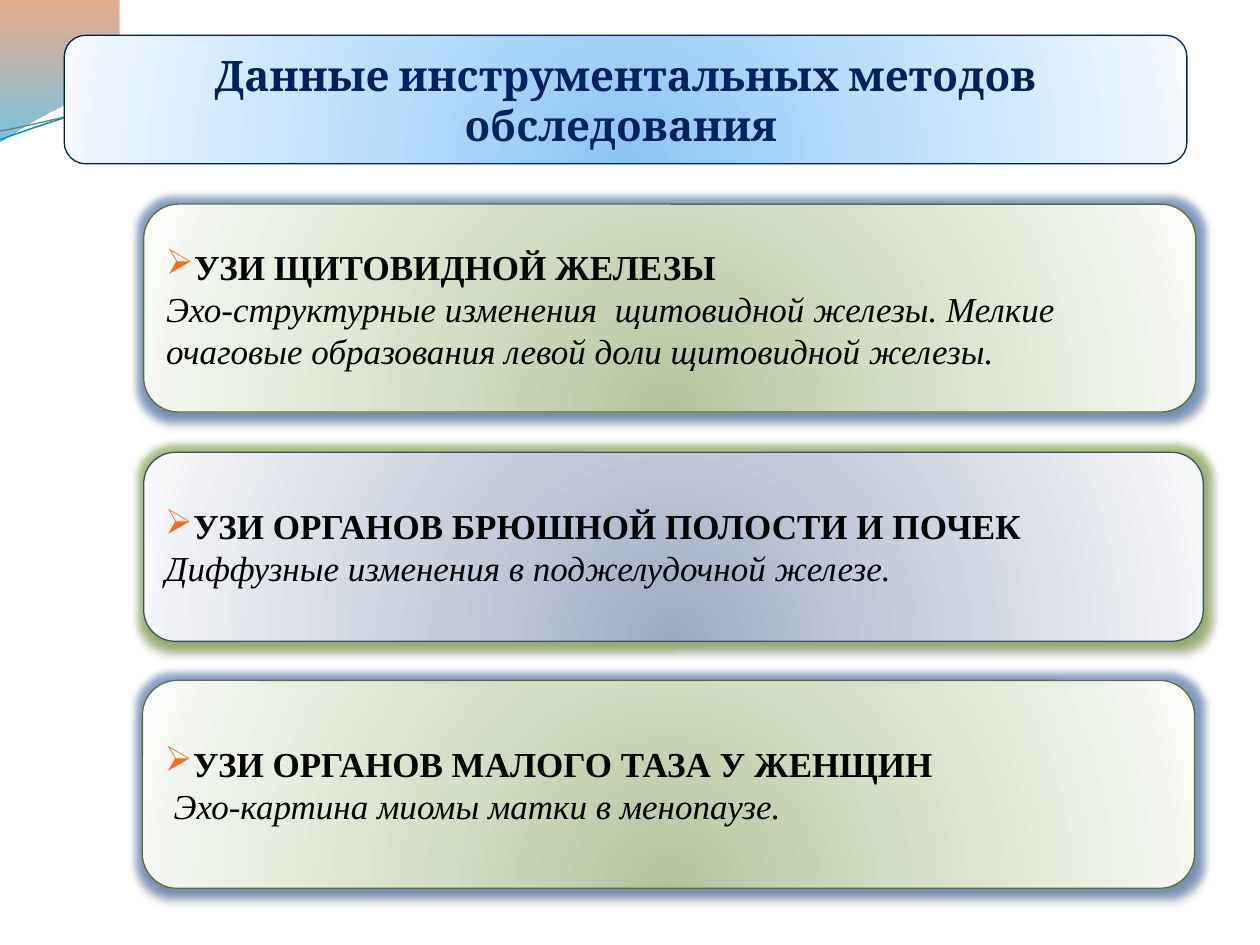
from lxml.etree import fromstring
from pptx import Presentation
from pptx.dml.color import RGBColor
from pptx.enum.shapes import MSO_SHAPE
from pptx.enum.text import MSO_ANCHOR, PP_ALIGN
from pptx.oxml.ns import nsdecls
from pptx.util import Inches, Pt

WHITE = RGBColor(0xFF, 0xFF, 0xFF)
BLACK = RGBColor(0, 0, 0)
NAVY = RGBColor(0x00, 0x20, 0x60)
OLIVE = RGBColor(0x5C, 0x71, 0x36)
SLATE = RGBColor(0x3A, 0x51, 0x6E)
ORANGE = RGBColor(0xF9, 0x6A, 0x1B)
BLUE_GLOW = RGBColor(0x5A, 0x82, 0xBE)
GREEN_GLOW = RGBColor(0x8D, 0xB4, 0x4F)
STRAND_BLUE = RGBColor(0x07, 0x8E, 0xBF)
STRAND_GRAY = RGBColor(0x79, 0x7B, 0x7E)
RUST = RGBColor(0xC9, 0x4A, 0x04)
AZURE = RGBColor(0x00, 0x95, 0xCC)
DEEP_AZURE = RGBColor(0x00, 0x7A, 0xA6)
BRIGHT_ORANGE = RGBColor(0xF4, 0x57, 0x00)


def shades(*colours):
    return [(position, RGBColor.from_string(colour), 100)
            for position, colour in zip((0, 43, 93, 100), colours)]


SKY_FILL = shades("8BC5F1", "B9DDFD", "EAF4FE", "F8FBFF")
GREEN_FILL = shades("B2C39B", "D3DFC5", "F1F5ED", "FBFCF9")
BLUE_FILL = shades("9DAAC1", "C6CEDD", "EEF0F4", "F9FAFC")

RADIAL = '<a:path path="circle"><a:fillToRect l="50000" t="130000" r="50000" b="-30000"/></a:path>'
DOWNWARD = '<a:lin ang="5400000" scaled="0"/>'

TITLE_FONT = {"name": "Cambria", "size": Pt(24), "bold": True}
HEADING_FONT = {"name": "Times New Roman", "size": Pt(20), "bold": True}
FINDING_FONT = {"name": "Times New Roman", "size": Pt(20), "bold": False, "italic": True}

CARDS = [
    ((1.14, 1.62, 8.35, 1.65), GREEN_FILL, OLIVE, BLUE_GLOW, "УЗИ ЩИТОВИДНОЙ ЖЕЛЕЗЫ",
     "Эхо-структурные изменения  щитовидной железы. Мелкие очаговые образования "
     "левой доли щитовидной железы."),
    ((1.14, 3.59, 8.41, 1.5), BLUE_FILL, SLATE, GREEN_GLOW,
     "УЗИ ОРГАНОВ БРЮШНОЙ ПОЛОСТИ И ПОЧЕК", "Диффузные изменения в поджелудочной железе."),
    ((1.13, 5.4, 8.35, 1.65), GREEN_FILL, OLIVE, BLUE_GLOW,
     "УЗИ ОРГАНОВ МАЛОГО ТАЗА У ЖЕНЩИН", " Эхо-картина миомы матки в менопаузе."),
]

WAVES = [
    ([(0, RUST, 45), (100, AZURE, 55)], (0, 0), [
        [(4.4, -0.01)],
        [(4.76, 0.17), (6.64, 0.63), (7.58, 0.63)],
        [(8.53, 0.63), (9.58, 0.26), (10, 0.09)],
        [(10.01, 0.36)],
        [(9.83, 0.44), (8.7, 0.76), (7.46, 0.75)],
        [(6.22, 0.75), (3.82, 0.28), (2.57, 0.34)],
        [(1.29, 0.36), (0.46, 0.83), (-0.01, 1.13)],
        [(0, 0)]]),
    ([(0, DEEP_AZURE, 30), (80, BRIGHT_ORANGE, 45)], (4.79, -0.01), [
        [(5.09, 0.11), (6.82, 0.62), (7.69, 0.65)],
        [(8.56, 0.69), (9.61, 0.32), (10, 0.21)],
        [(10, 0)],
        [(4.79, -0.01)]]),
]
STRANDS = [
    (STRAND_BLUE, 0.85, (0, 1.11), [
        [(0.48, 0.93), (1.58, 0.57), (2.77, 0.52)],
        [(3.95, 0.47), (5.93, 0.89), (7.13, 0.8)],
        [(8.33, 0.71), (9.38, 0.15), (9.98, -0.02)]]),
    (STRAND_GRAY, 0.75, (0, 1.04), [
        [(0.47, 0.96), (1.64, 0.61), (2.83, 0.56)],
        [(4.03, 0.51), (5.97, 0.84), (7.17, 0.75)],
        [(8.36, 0.67), (9.41, 0.21), (10, 0.06)]]),
]


def element(xml):
    return fromstring(xml.replace(" ", f" {nsdecls('a')} ", 1))


def colour_xml(colour, opacity):
    return f'<a:srgbClr val="{colour}"><a:alpha val="{opacity * 1000}"/></a:srgbClr>'


def set_gradient(shape, stops, direction):
    stop_xml = "".join(f'<a:gs pos="{position * 1000}">{colour_xml(colour, opacity)}</a:gs>'
                       for position, colour, opacity in stops)
    shape._element.spPr.insert(2, element(
        f'<a:gradFill rotWithShape="1"><a:gsLst>{stop_xml}</a:gsLst>{direction}</a:gradFill>'))


def set_glow(shape, glow):
    effects = shape._element.spPr.find("{*}effectLst")
    effects.append(element(f'<a:glow rad="{Pt(8)}">{colour_xml(glow, 60)}</a:glow>'))
    effects.append(element(
        f'<a:outerShdw blurRad="{Pt(3.1)}" dist="{Pt(1.6)}" dir="5400000" '
        f'rotWithShape="0">{colour_xml(BLACK, 38)}</a:outerShdw>'))


def bend_segments(shape, segments):
    straight = iter(list(shape._element.iter("{*}lnTo")))
    for segment in segments:
        pieces = [next(straight) for _ in segment]
        if len(segment) == 3:
            curve = element("<a:cubicBezTo />")
            pieces[0].addprevious(curve)
            for piece in pieces:
                curve.append(piece[0])
                piece.getparent().remove(piece)


def add_curve(slide, start, segments):
    builder = slide.shapes.build_freeform(*map(Inches, start))
    points = [tuple(map(Inches, point)) for segment in segments for point in segment]
    builder.add_line_segments(points, close=start == segments[-1][-1])
    shape = builder.convert_to_shape()
    shape.shadow.inherit = False
    bend_segments(shape, segments)
    return shape


def add_backdrop(slide, presentation):
    for stops, start, segments in WAVES:
        wave = add_curve(slide, start, segments)
        set_gradient(wave, stops, DOWNWARD)
        wave.line.fill.background()
    for colour, width, start, segments in STRANDS:
        strand = add_curve(slide, start, segments)
        strand.fill.background()
        strand.line.color.rgb = colour
        strand.line.width = Pt(width)
    panel = slide.shapes.add_shape(MSO_SHAPE.RECTANGLE,
                                   *map(Inches, (0.95, -0.06, 9.05, 7.56)))
    panel.shadow.inherit = False
    panel.fill.solid()
    panel.fill.fore_color.rgb = WHITE
    panel.line.fill.background()


def add_box(slide, place, stops, outline):
    shape = slide.shapes.add_shape(MSO_SHAPE.ROUNDED_RECTANGLE, *map(Inches, place))
    shape.shadow.inherit = False
    set_gradient(shape, stops, RADIAL)
    shape.line.color.rgb = outline
    shape.line.width = Pt(0.75)
    shape.text_frame.word_wrap = True
    shape.text_frame.vertical_anchor = MSO_ANCHOR.MIDDLE
    return shape


def write(paragraph, text, formats, colour, alignment):
    paragraph.alignment = alignment
    run = paragraph.add_run()
    run.text = text
    for name, value in formats.items():
        setattr(run.font, name, value)
    run.font.color.rgb = colour


def add_bullet(paragraph):
    properties = paragraph._p.get_or_add_pPr()
    properties.append(element(f'<a:buClr ><a:srgbClr val="{ORANGE}"/></a:buClr>'))
    properties.append(element('<a:buFont typeface="OpenSymbol"/>'))
    properties.append(element('<a:buChar char="➢"/>'))


def add_title(slide):
    shape = add_box(slide, (0.51, 0.28, 8.91, 1.02), SKY_FILL, NAVY)
    write(shape.text_frame.paragraphs[0], "Данные инструментальных методов обследования ",
          TITLE_FONT, NAVY, PP_ALIGN.CENTER)


def add_card(slide, place, stops, outline, glow, heading, finding):
    shape = add_box(slide, place, stops, outline)
    set_glow(shape, glow)
    frame = shape.text_frame
    write(frame.paragraphs[0], heading, HEADING_FONT, BLACK, PP_ALIGN.LEFT)
    add_bullet(frame.paragraphs[0])
    write(frame.add_paragraph(), finding, FINDING_FONT, BLACK, PP_ALIGN.LEFT)


def main():
    presentation = Presentation()
    presentation.slide_width, presentation.slide_height = Inches(10), Inches(7.5)
    slide = presentation.slides.add_slide(presentation.slide_layouts[6])
    add_backdrop(slide, presentation)
    add_title(slide)
    for card in CARDS:
        add_card(slide, *card)
    presentation.save("out.pptx")


if __name__ == "__main__":
    main()
